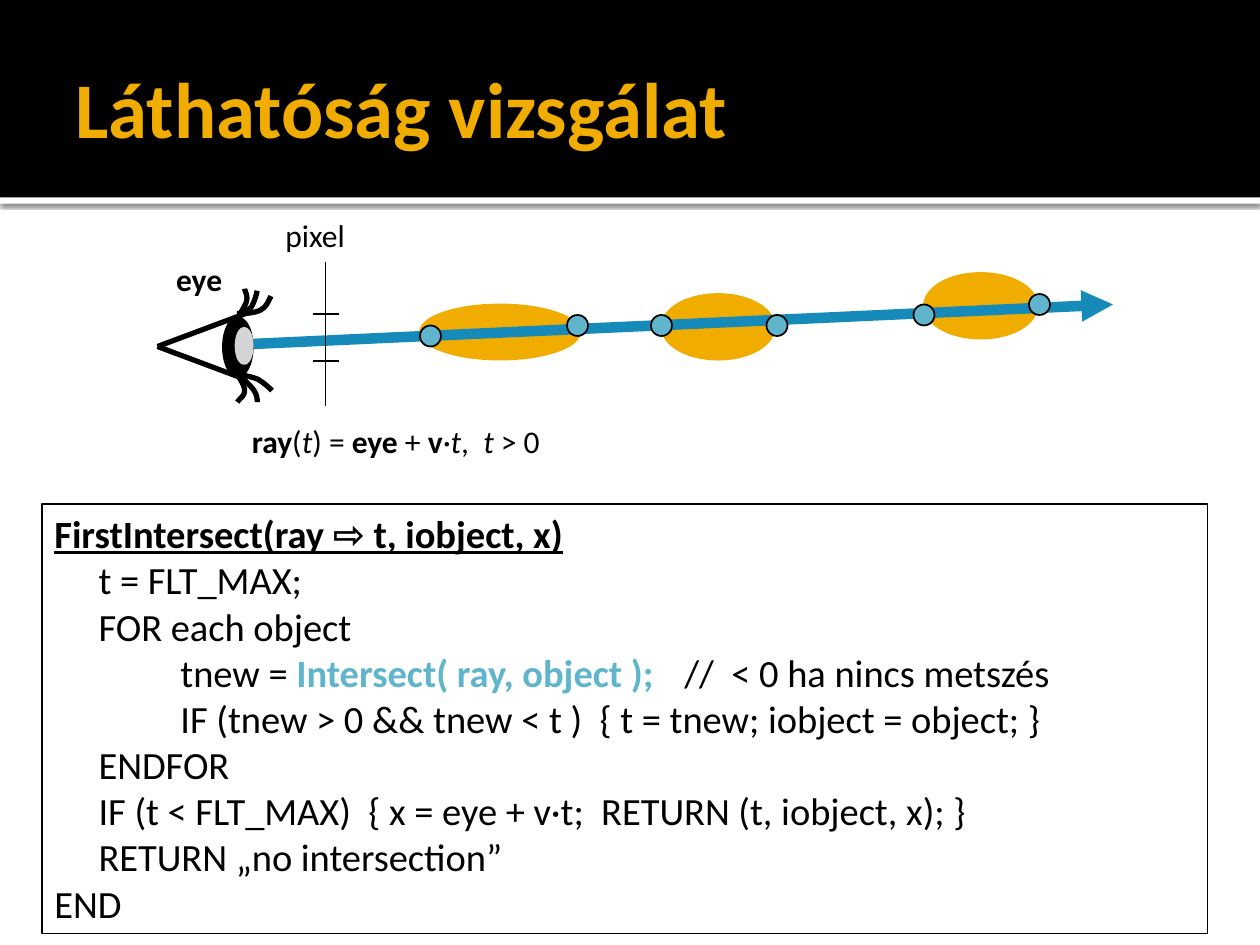
"""Build the visibility test slide: an eye's ray crossing objects, with the FirstIntersect pseudocode."""
import lxml.etree
import pptx
import pptx.dml.color
import pptx.enum.shapes
import pptx.enum.text
import pptx.oxml.ns
import pptx.util

BLACK = pptx.dml.color.RGBColor(0x00, 0x00, 0x00)
WHITE = pptx.dml.color.RGBColor(0xFF, 0xFF, 0xFF)
AMBER = pptx.dml.color.RGBColor(0xF0, 0xAD, 0x00)
BLUE = pptx.dml.color.RGBColor(0x16, 0x8B, 0xBA)
AQUA = pptx.dml.color.RGBColor(0x60, 0xB5, 0xCC)
GREY = pptx.dml.color.RGBColor(0xD4, 0xD4, 0xD6)
RECT = pptx.enum.shapes.MSO_SHAPE.RECTANGLE
OVAL = pptx.enum.shapes.MSO_SHAPE.OVAL
COLUMNS = 120

deck = pptx.Presentation()
deck.slide_width = pptx.util.Inches(10)
deck.slide_height = pptx.util.Inches(7.5)
slide = deck.slides.add_slide(deck.slide_layouts[5])
shapes = slide.shapes


def grid(*cells):
    return [int(deck.slide_width * cell / COLUMNS) for cell in cells]


def draw(kind, box, fill=None, line=None, width=1):
    shape = shapes.add_shape(kind, *grid(*box))
    shape.shadow.inherit = False
    if fill is None:
        shape.fill.background()
    else:
        shape.fill.solid()
        shape.fill.fore_color.rgb = fill
    if line is None:
        shape.line.fill.background()
    else:
        shape.line.color.rgb = line
        shape.line.width = pptx.util.Pt(width)
    return shape


stripe = draw(RECT, (0, 18.8, COLUMNS, 0.6), WHITE)
effects = stripe._element.spPr.find(pptx.oxml.ns.qn("a:effectLst"))
shadow = lxml.etree.SubElement(effects, pptx.oxml.ns.qn("a:outerShdw"),
                               blurRad="31750", dist="10160", dir="5400000", algn="t", rotWithShape="0")
shade = lxml.etree.SubElement(shadow, pptx.oxml.ns.qn("a:srgbClr"), val="000000")
lxml.etree.SubElement(shade, pptx.oxml.ns.qn("a:alpha"), val="60000")
draw(RECT, (0, 0, COLUMNS, 18.8), BLACK)

title = shapes.title
shapes._spTree.append(title._element)
title.left, title.top, title.width, title.height = grid(6, 2, 108, 16.4)
title.text_frame.text = "Láthatóság vizsgálat"
title.text_frame.vertical_anchor = pptx.enum.text.MSO_ANCHOR.MIDDLE
title.text_frame.margin_right = pptx.util.Inches(0.05)
heading = title.text_frame.paragraphs[0]
heading.alignment = pptx.enum.text.PP_ALIGN.LEFT
heading.runs[0].font.name = "Calibri"
heading.runs[0].font.size = pptx.util.Pt(45)
heading.runs[0].font.bold = True
heading.runs[0].font.color.rgb = AMBER

for scene_object in [(88, 26, 10.8, 6.25), (63, 28, 10.8, 6.25), (40, 29, 15.25, 5.25)]:
    draw(OVAL, scene_object, AMBER, AMBER)

strokes = [
    ((23.2, 32.8, 106, 29), BLUE, 6),
    ((31, 25, 31, 38.7), BLACK, 1),
    ((29.8, 34.4, 32.3, 34.4), BLACK, 1),
    ((29.8, 29.9, 32.3, 29.9), BLACK, 1),
    ((15, 33, 23.3, 29.9), BLACK, 3),
    ((15, 33, 23.3, 36.1), BLACK, 3),
]
for ends, colour, width in strokes:
    stroke = shapes.add_connector(pptx.enum.shapes.MSO_CONNECTOR.STRAIGHT, *grid(*ends))
    stroke.line.color.rgb = colour
    stroke.line.width = pptx.util.Pt(width)
    if colour == BLUE:
        lxml.etree.SubElement(stroke.line._get_or_add_ln(), pptx.oxml.ns.qn("a:tailEnd"), type="triangle")
    lxml.etree.SubElement(stroke._element.spPr, pptx.oxml.ns.qn("a:effectLst"))

draw(OVAL, (21.4, 30.4, 2.5, 5.3), BLACK, BLACK, 3)
draw(OVAL, (22.6, 31.4, 1.3, 3.1), GREY, GREY, 3)

lashes = [
    [(22.6, 29.9), (23, 29.8), (23.5, 29.6), (23.9, 29.3), (24.2, 28.9), (24.4, 28.1), (24.5, 27.7)],
    [(23.3, 29.9), (23.5, 29.8), (24.6, 29.8), (25, 29.4), (25.4, 29.2), (25.7, 28.4), (25.8, 28.2)],
    [(22.6, 35.6), (23.4, 35.8), (24, 35.9), (24.5, 36.1), (25.1, 36.4), (25.7, 37), (25.9, 37.2)],
    [(22.6, 35.6), (22.9, 35.9), (23.9, 36.7), (24.2, 37.2), (24.5, 37.7), (24.5, 38), (24.5, 38.3)],
    [(22.6, 35.6), (22.9, 36.2), (23.3, 36.7), (23.3, 37.2), (23.3, 37.7), (22.9, 37.9), (22.6, 38.3)],
    [(22.9, 29.9), (23, 29.6), (23.5, 28.9), (23.5, 28.6), (23.6, 28.1), (23.3, 27.7), (23.3, 27.5)],
]
STEPS = 8
for lash in lashes:
    curve = []
    for first in (0, 3):
        for step in range(1, STEPS + 1):
            t = step / STEPS
            weights = ((1 - t) ** 3, 3 * t * (1 - t) ** 2, 3 * t * t * (1 - t), t ** 3)
            controls = lash[first:first + 4]
            curve.append(grid(*(sum(w * point[axis] for w, point in zip(weights, controls)) for axis in (0, 1))))
    builder = shapes.build_freeform(*grid(*lash[0]))
    builder.add_line_segments(curve, close=False)
    hair = builder.convert_to_shape()
    hair.shadow.inherit = False
    hair.fill.background()
    hair.line.color.rgb = BLACK
    hair.line.width = pptx.util.Pt(3)

for left, top in [(40, 31), (54, 30), (62, 30), (73, 30), (87, 29), (98, 28)]:
    draw(OVAL, (left, top, 2, 2), AQUA, BLACK)

pixel = shapes.add_textbox(*grid(26, 20, 10.4, 6))
equation = shapes.add_textbox(*grid(22.8, 39.6, 40.4, 6))
eye = shapes.add_textbox(*grid(15.6, 24.2, 8, 6))
pseudocode = draw(RECT, (4, 48, 111, 40.9), line=BLACK)

BODY, LOOP = 0.35, 1
texts = [
    (pixel, 18, [(0, [("pixel", "")])]),
    (eye, 18, [(0, [("eye", "b")])]),
    (equation, 18, [(0, [("ray", "b"), ("(", ""), ("t", "i"), (") = ", ""), ("eye", "b"), (" + ", ""),
                         ("v", "b"), ("·t", "i"), (",  ", ""), ("t", "i"), (" > 0", "")])]),
    (pseudocode, 22, [
        (0, [("FirstIntersect(ray ⇨ t, iobject, x)", "bu")]),
        (BODY, [("t = FLT_MAX;", "")]),
        (BODY, [("FOR each object", "")]),
        (LOOP, [("tnew = ", ""), ("Intersect( ray, object );", "bc"), ("\t//  < 0 ha nincs metszés", "")]),
        (LOOP, [("IF (tnew > 0 && tnew < t )  { t = tnew; iobject = object; }", "")]),
        (BODY, [("ENDFOR", "")]),
        (BODY, [("IF (t < FLT_MAX)  { x = eye + v·t;  RETURN (t, iobject, x); }", "")]),
        (BODY, [("RETURN „no intersection”", "")]),
        (0, [("END", "")]),
    ]),
]
for holder, size, lines in texts:
    frame = holder.text_frame
    frame.word_wrap = True
    frame.vertical_anchor = pptx.enum.text.MSO_ANCHOR.TOP
    for number, (indent, pieces) in enumerate(lines):
        paragraph = frame.add_paragraph() if number else frame.paragraphs[0]
        paragraph.alignment = pptx.enum.text.PP_ALIGN.LEFT
        paragraph._p.get_or_add_pPr().set("marL", str(pptx.util.Inches(indent)))
        for words, style in pieces:
            run = paragraph.add_run()
            run.text = words
            run.font.name = "Calibri"
            run.font.size = pptx.util.Pt(size)
            run.font.bold = "b" in style
            run.font.italic = "i" in style
            run.font.underline = "u" in style
            run.font.color.rgb = AQUA if "c" in style else BLACK

deck.save("out.pptx")
